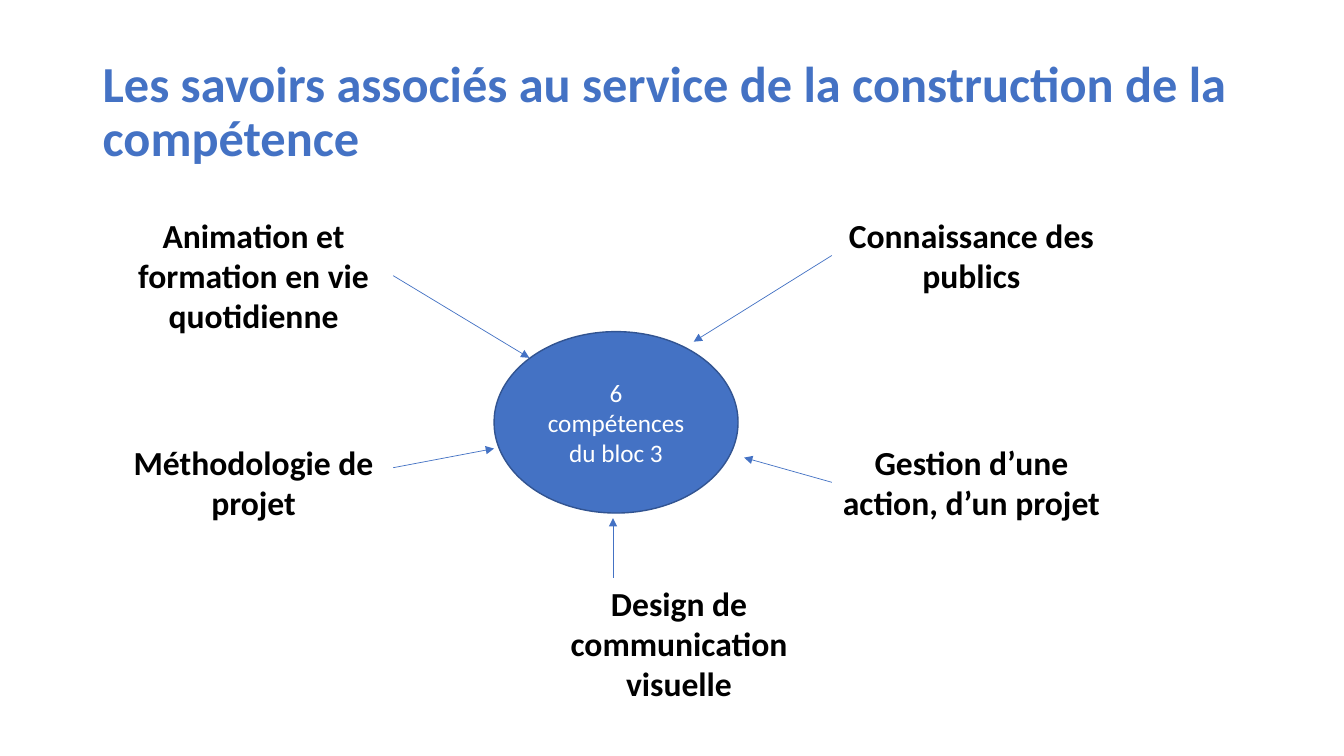
import pptx
import pptx.dml.color
import pptx.enum.shapes
import pptx.enum.text
import pptx.oxml.ns
import pptx.util
from lxml import etree
from pptx.util import Inches

BLUE = "4472C4"
LEFT_COLUMN, RIGHT_COLUMN = 1.13, 8.25
TOP_ROW, MIDDLE_ROW = 2.08, 4.33
RIGHT_SIDE, LEFT_SIDE = 3, 1

# text, left, top, height, arrow start, arrow end, joined side
TOPICS = [
    ("Animation et formation en vie quotidienne", LEFT_COLUMN, TOP_ROW, 1.31,
     (3.9, 2.74), (5.25, 3.55), RIGHT_SIDE),
    ("Connaissance des publics", RIGHT_COLUMN, TOP_ROW, 0.91,
     (8.25, 2.53), (6.88, 3.39), LEFT_SIDE),
    ("Méthodologie de projet", LEFT_COLUMN, MIDDLE_ROW, 0.91,
     (3.9, 4.64), (4.9, 4.45), None),
    ("Design de communication visuelle", 5.35, 5.73, 1.31,
     (6.08, 5.73), (6.08, 5.14), None),
    ("Gestion d’une action, d’un projet", RIGHT_COLUMN, MIDDLE_ROW, 0.91,
     (8.25, 4.78), (7.38, 4.54), LEFT_SIDE),
]


def color(value):
    return pptx.dml.color.RGBColor.from_string(value)


def write_text(shape, text, size=24, ink="000000", bold=True,
               align="CENTER", anchor="TOP", line_spacing=None):
    frame = shape.text_frame
    frame.word_wrap = True
    frame.vertical_anchor = getattr(pptx.enum.text.MSO_ANCHOR, anchor)
    para = frame.paragraphs[0]
    para.alignment = getattr(pptx.enum.text.PP_ALIGN, align)
    para.line_spacing = line_spacing
    span = para.add_run()
    span.text = text
    span.font.name = "Calibri"
    span.font.size = pptx.util.Pt(size)
    span.font.bold = bold
    span.font.color.rgb = color(ink)


def add_text_box(page, text, left, top, width, height, **text_format):
    box = page.shapes.add_textbox(
        Inches(left), Inches(top), Inches(width), Inches(height))
    write_text(box, text, **text_format)
    return box


def add_oval(page, text, left, top, width, height):
    oval = page.shapes.add_shape(
        pptx.enum.shapes.MSO_SHAPE.OVAL,
        Inches(left), Inches(top), Inches(width), Inches(height))
    oval.shadow.inherit = False
    oval.fill.solid()
    oval.fill.fore_color.rgb = color(BLUE)
    oval.line.color.rgb = color("325491")
    oval.line.width = pptx.util.Pt(1)
    write_text(oval, text, size=18, ink="FFFFFF", bold=False, anchor="MIDDLE")


def add_arrow(page, start, end, box, side):
    arrow = page.shapes.add_connector(
        pptx.enum.shapes.MSO_CONNECTOR.STRAIGHT,
        Inches(start[0]), Inches(start[1]), Inches(end[0]), Inches(end[1]))
    if side is not None:
        arrow.begin_connect(box, side)
    arrow.line.color.rgb = color(BLUE)
    arrow.line.width = pptx.util.Pt(0.5)
    # Arrowhead, and no shadow
    qn = pptx.oxml.ns.qn
    properties = arrow.line._get_or_add_ln()
    etree.SubElement(properties, qn("a:tailEnd"), type="triangle")
    etree.SubElement(arrow._element.spPr, qn("a:effectLst"))


def main():
    deck = pptx.Presentation()
    deck.slide_width, deck.slide_height = Inches(13.33), Inches(7.5)
    page = deck.slides.add_slide(deck.slide_layouts[6])

    # Title
    add_text_box(
        page, "Les savoirs associés au service de la construction de la compétence",
        0.92, 0.4, 11.5, 1.45,
        size=36, ink=BLUE, align="LEFT", anchor="MIDDLE", line_spacing=0.9)

    # Central skills
    add_oval(page, "6 compétences du bloc 3", 4.9, 3.29, 2.42, 1.8)

    # Topics and their arrows to the centre
    for text, left, top, height, start, end, side in TOPICS:
        box = add_text_box(page, text, left, top, 2.77, height)
        add_arrow(page, start, end, box, side)

    deck.save("out.pptx")


if __name__ == "__main__":
    main()
